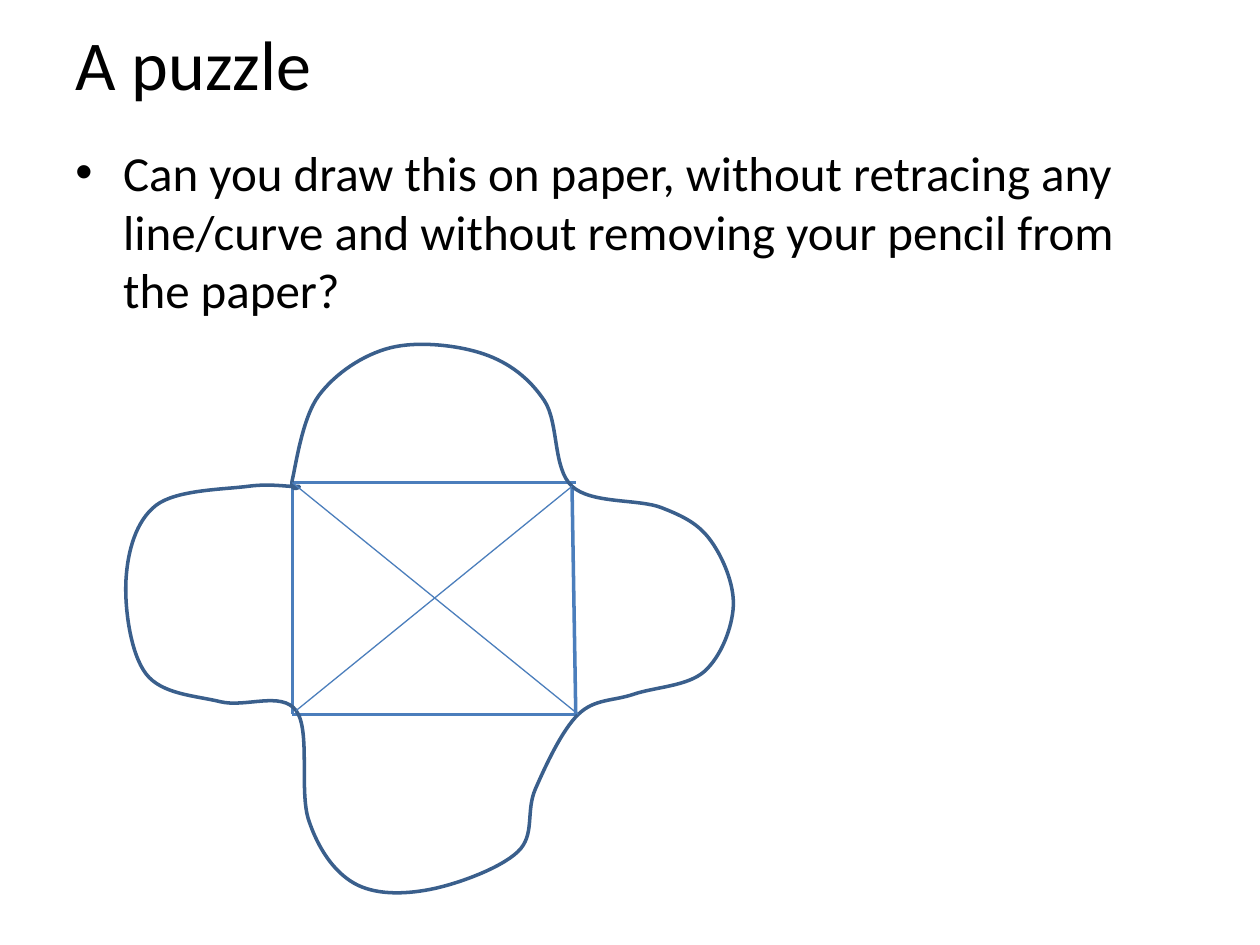
"""Builds a slide with a one-stroke drawing puzzle."""
from lxml.etree import SubElement
from pptx import Presentation
from pptx.dml.color import RGBColor
from pptx.enum.shapes import MSO_CONNECTOR as Connector
from pptx.enum.text import MSO_ANCHOR as Anchor
from pptx.oxml.ns import qn
from pptx.util import Inches, Pt

BLACK = RGBColor(0x00, 0x00, 0x00)
BLUE = RGBColor(0x4B, 0x7E, 0xBC)
DARK_BLUE = RGBColor(0x3A, 0x5F, 0x8C)

SIDES = [
    ((2.32, 3.83), (2.32, 5.67)),
    ((4.57, 5.67), (2.32, 5.67)),
    ((2.32, 3.83), (4.57, 3.83)),
    ((4.57, 5.67), (4.54, 3.86)),
]
DIAGONALS = [
    ((2.32, 3.83), (4.59, 5.67)),
    ((2.35, 5.64), (4.54, 3.86)),
]
LOOP = [
    (2.32, 3.81), (2.53, 3.14), (3.1, 2.76), (3.84, 2.81), (4.32, 3.18),
    (4.54, 3.86), (5.25, 4.03), (5.64, 4.29), (5.82, 4.81), (5.59, 5.33),
    (5.03, 5.51), (4.59, 5.67), (4.25, 6.26), (4.11, 6.76), (3.41, 7.06),
    (2.81, 7.01), (2.45, 6.51), (2.35, 5.64), (1.75, 5.57), (1.16, 5.35),
    (1, 4.6), (1.24, 4.01), (1.97, 3.86), (2.36, 3.86),
]


def write_text(frame, text, size, bullet=None, indent=0, color=BLACK, font="Calibri"):
    para = frame.paragraphs[0]
    if bullet:
        properties = para._p.get_or_add_pPr()
        properties.set("marL", str(Inches(indent)))
        properties.set("indent", str(-Inches(indent)))
        SubElement(properties, qn("a:buFont"), typeface="Arial")
        SubElement(properties, qn("a:buChar"), char=bullet)
    span = para.add_run()
    span.text = text
    span.font.size = Pt(size)
    span.font.name = font
    span.font.color.rgb = color


def smooth_outline(path):
    """Turn the straight segments of a closed path into a smooth spline."""
    segments = path.findall(qn("a:lnTo"))
    knots = [(int(segment[0].get("x")), int(segment[0].get("y"))) for segment in segments]
    count = len(knots)

    def handle(index, direction):
        before, after = knots[index - 1], knots[(index + 1) % count]
        return tuple(round(k + direction * (a - b) / 6)
                     for k, a, b in zip(knots[index], after, before))

    for index, segment in enumerate(segments):
        curve = path.makeelement(qn("a:cubicBezTo"))
        for x, y in (handle((index - 1) % count, 1), handle(index, -1), knots[index]):
            SubElement(curve, qn("a:pt"), x=str(x), y=str(y))
        path.replace(segment, curve)


class Sketch:
    """Holds the current slide and its drawing style."""

    def __init__(self, page, color, width):
        self.page = page
        self.color = color
        self.width = width

    def text(self, left, top, width, height, text, anchor=Anchor.TOP, **style):
        box = self.page.shapes.add_textbox(*map(Inches, (left, top, width, height)))
        box.text_frame.word_wrap = True
        box.text_frame.vertical_anchor = anchor
        write_text(box.text_frame, text, **style)

    def line(self, start, end, width=None):
        line = self.page.shapes.add_connector(
            Connector.STRAIGHT, *map(Inches, (*start, *end)))
        line.line.color.rgb = self.color
        line.line.width = Pt(width or self.width)
        SubElement(line._element.spPr, qn("a:effectLst"))

    def curve(self, points, color):
        knots = [(Inches(x), Inches(y)) for x, y in points]
        builder = self.page.shapes.build_freeform(*knots[0])
        builder.add_line_segments(knots[1:] + knots[:1], close=True)
        curve = builder.convert_to_shape()
        smooth_outline(curve._element.find(".//" + qn("a:path")))
        curve.shadow.inherit = False
        curve.fill.background()
        curve.line.color.rgb = color
        curve.line.width = Pt(self.width)


def main():
    deck = Presentation()
    deck.slide_width, deck.slide_height = Inches(10), Inches(7.5)
    sketch = Sketch(deck.slides.add_slide(deck.slide_layouts[6]), BLUE, 2)
    sketch.text(0.5, 0, 9, 1, "A puzzle", anchor=Anchor.MIDDLE, size=40)
    sketch.text(0.5, 1.08, 9, 5.62,
                "Can you draw this on paper, without retracing any line/curve "
                "and without removing your pencil from the paper?",
                size=28, bullet="•", indent=0.38)
    for start, end in SIDES:
        sketch.line(start, end)
    sketch.curve(LOOP, DARK_BLUE)
    for start, end in DIAGONALS:
        sketch.line(start, end, width=0.75)
    deck.save("out.pptx")


if __name__ == "__main__":
    main()
